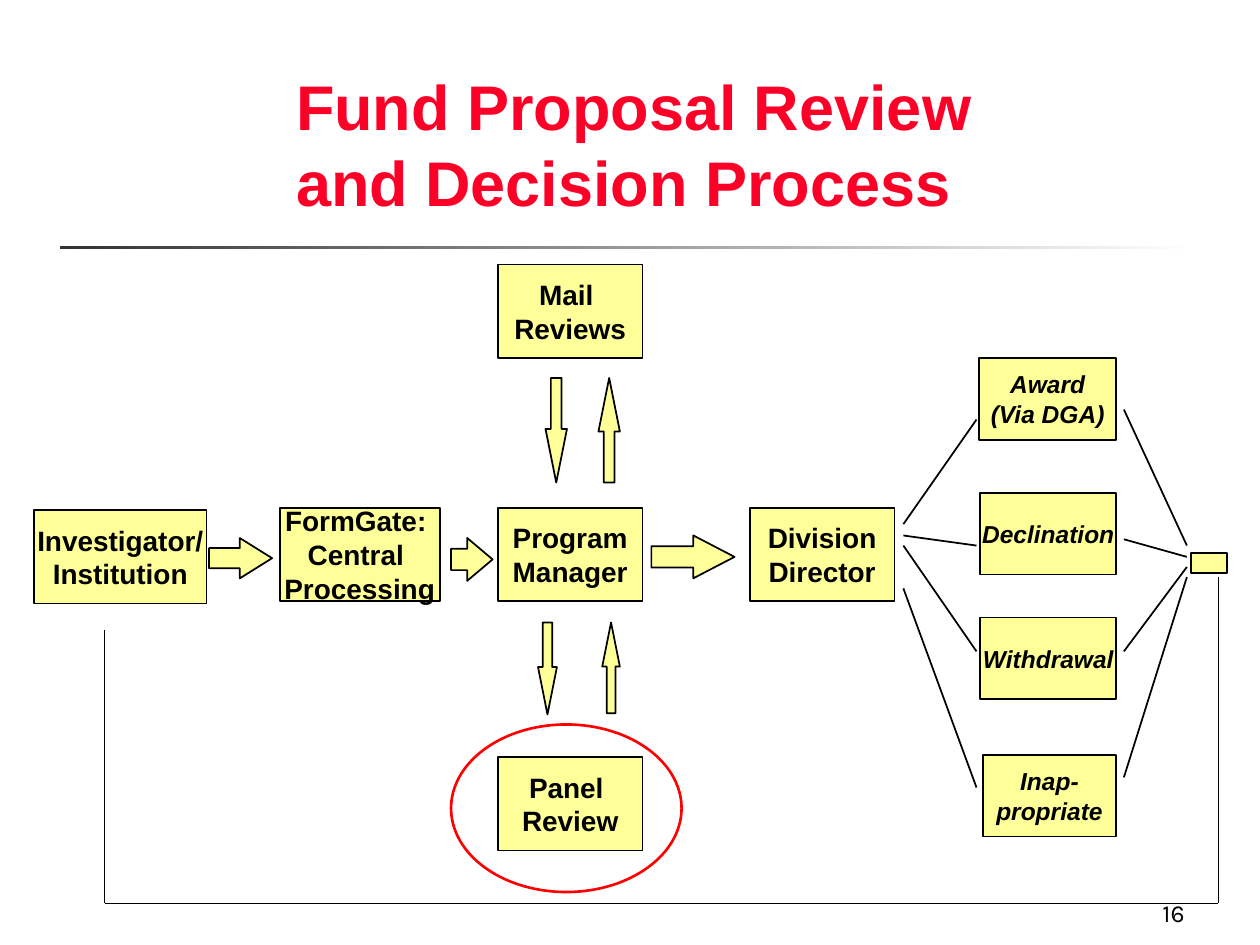
from pptx import Presentation
from pptx.dml.color import RGBColor
from pptx.enum.shapes import MSO_CONNECTOR as Link, MSO_SHAPE as Kind
from pptx.enum.text import MSO_ANCHOR as Anchor, MSO_AUTO_SIZE as Fit, PP_ALIGN as Align
from pptx.oxml.ns import qn
from pptx.util import Inches, Pt
from lxml import etree

BLACK, YELLOW, RED, TITLE_RED = "000000", "FFFF99", "FF0000", "FC0128"


def color(value):
    return RGBColor.from_string(value)


def add_span(para, text, size, ink=BLACK, bold=False, italic=False, font="Arial"):
    span = para.add_run()
    span.text = text
    span.font.name, span.font.size = font, Pt(size)
    span.font.bold, span.font.italic = bold, italic
    span.font.color.rgb = color(ink)


def add_figure(page, kind, box, fill=YELLOW, line=BLACK, width=1, adjust=()):
    figure = page.shapes.add_shape(kind, *map(Inches, box))
    figure.shadow.inherit = False
    for index, value in enumerate(adjust):
        figure.adjustments[index] = value
    if fill:
        figure.fill.solid()
        figure.fill.fore_color.rgb = color(fill)
    else:
        figure.fill.background()
    if line:
        figure.line.color.rgb = color(line)
        figure.line.width = Pt(width)
    else:
        figure.line.fill.background()
    return figure


def add_step(page, box, lines, size=16, italic=False):
    frame = add_figure(page, Kind.RECTANGLE, box).text_frame
    frame.word_wrap = False
    frame.vertical_anchor = Anchor.MIDDLE
    for index, text in enumerate(lines):
        para = frame.add_paragraph() if index else frame.paragraphs[0]
        para.alignment = Align.CENTER
        add_span(para, text, size, bold=True, italic=italic)


def add_line(page, start, end, width=1):
    line = page.shapes.add_connector(Link.STRAIGHT, *map(Inches, start + end))
    line.line.color.rgb = color(BLACK)
    line.line.width = Pt(width)
    etree.SubElement(line._element.spPr, qn("a:effectLst"))


def add_title(page, box, lines):
    title = page.shapes.title
    title.left, title.top, title.width, title.height = map(Inches, box)
    frame = title.text_frame
    frame.auto_size = Fit.NONE
    frame.vertical_anchor = Anchor.MIDDLE
    para = frame.paragraphs[0]
    para.alignment = Align.LEFT
    for index, text in enumerate(lines):
        if index:
            para.add_line_break()
        add_span(para, text, 36, TITLE_RED, bold=True)


def add_rule(page, box):
    rule = add_figure(page, Kind.ROUNDED_RECTANGLE, box, line=None, adjust=[0.05])
    rule.fill.gradient()
    rule.fill.gradient_angle = 180
    for stop, value, place in zip(rule.fill.gradient_stops, ("FFFFFF", "333333"), (0, 1)):
        stop.color.rgb = color(value)
        stop.position = place


def add_page_number(page, box, number):
    frame = page.shapes.add_textbox(*map(Inches, box)).text_frame
    frame.word_wrap = True
    frame.vertical_anchor = Anchor.BOTTOM
    para = frame.paragraphs[0]
    para.alignment = Align.RIGHT
    add_span(para, number, 14, font="Karla")


def add_main_flow(page, top):
    height = 0.74
    for left, shift, width, lines in [
        (0.27, 0.02, 1.37, ["Investigator/", "Institution"]),
        (2.22, 0, 1.27, ["FormGate: ", "Central ", "Processing"]),
        (3.95, 0, 1.15, ["Program", "Manager"]),
        (5.95, 0, 1.15, ["Division", "Director"]),
    ]:
        add_step(page, (left, top + shift, width, height), lines)
    for left, shift, width, thick, head in [
        (1.66, 0.24, 0.5, 0.32, 0.8),
        (3.58, 0.24, 0.33, 0.34, 0.61),
        (5.17, 0.22, 0.66, 0.34, 0.96),
    ]:
        add_figure(page, Kind.RIGHT_ARROW, (left, top + shift, width, thick),
                   adjust=[0.5, head])


def add_reviews(page, left):
    add_step(page, (left, 2.1, 1.15, 0.74), ["Mail ", "Reviews"])
    add_step(page, (left, 6.01, 1.15, 0.74), ["Panel ", "Review"])
    for kind, shift, top, width, height in [
        (Kind.DOWN_ARROW, 0.38, 3, 0.17, 0.83),
        (Kind.UP_ARROW, 0.8, 3, 0.17, 0.83),
        (Kind.DOWN_ARROW, 0.32, 4.94, 0.15, 0.73),
        (Kind.UP_ARROW, 0.83, 4.94, 0.14, 0.72),
    ]:
        add_figure(page, kind, (left + shift, top, width, height), adjust=[0.5, 2.5])
    # Highlight around the panel review
    add_figure(page, Kind.OVAL, (left - 0.37, 5.75, 1.83, 1.33),
               fill=None, line=RED, width=1.5)


def add_outcomes(page, right):
    # Each outcome: top, width, text, line in (from, to), line out (from, to)
    for top, width, lines, (leave, reach), (exit_y, join) in [
        (2.84, 1.09, ["Award", "(Via DGA)"], (4.16, 3.33), (3.25, 4.33)),
        (3.91, 1.08, ["Declination"], (4.25, 4.33), (4.28, 4.42)),
        (4.9, 1.08, ["Withdrawal"], (4.33, 5.17), (5.17, 4.5)),
        (5.99, 1.06, ["Inap-", "propriate"], (4.67, 6.25), (6.17, 4.58)),
    ]:
        add_step(page, (right - width, top, width, 0.65), lines, 14, italic=True)
        add_line(page, (7.17, leave), (7.75, reach))
        add_line(page, (8.92, exit_y), (9.42, join))
    add_figure(page, Kind.RECTANGLE, (9.45, 4.39, 0.29, 0.16))


def add_return_path(page, left, right, bottom):
    add_line(page, (right, 4.58), (right, bottom))
    add_line(page, (left, bottom), (left, 5))
    add_line(page, (left, bottom), (right, bottom), 0.75)


def main():
    deck = Presentation()
    deck.slide_width, deck.slide_height = Inches(10), Inches(7.5)
    page = deck.slides.add_slide(deck.slide_layouts[5])
    add_rule(page, (0.48, 1.95, 9, 0.03))
    add_page_number(page, (7.42, 7.08, 2.08, 0.33), "16")
    add_title(page, (2.25, 0.35, 7.53, 1.57), ["Fund Proposal Review ", "and Decision Process"])
    add_main_flow(page, 4.03)
    add_reviews(page, 3.95)
    add_outcomes(page, 8.86)
    add_return_path(page, 0.83, 9.67, 7.17)
    deck.save("out.pptx")


if __name__ == "__main__":
    main()
